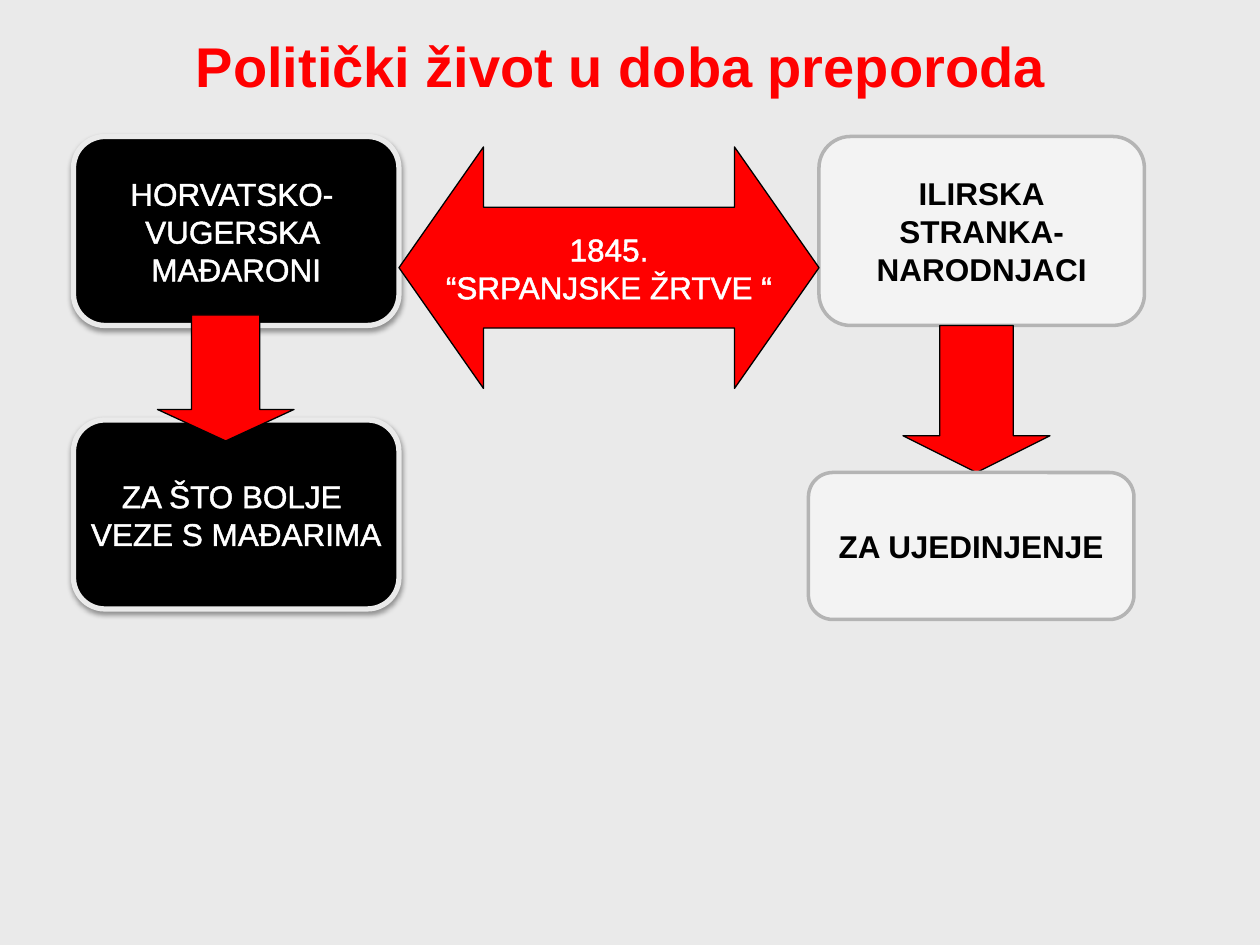
import pptx
import pptx.util
import pptx.dml.color
import pptx.enum.shapes
import pptx.enum.text
import pptx.oxml
import pptx.oxml.ns
from dataclasses import dataclass

SHAPE = pptx.enum.shapes.MSO_SHAPE
ANCHOR = pptx.enum.text.MSO_ANCHOR
NS = pptx.oxml.ns.nsdecls("a")
UNIT = pptx.util.Inches(1) // 12  # grid of 120 columns by 90 rows
COLS, ROWS = 120, 90


@dataclass(frozen=True)
class Theme:
    font: str = "Arial"
    title_size: int = 32
    body_size: int = 18
    back: str = "EAEAEA"
    red: str = "FF0000"
    black: str = "000000"
    white: str = "FFFFFF"
    light: str = "F3F3F3"
    grey: str = "B4B4B4"
    title_outline: str = "44C2FF"


@dataclass(frozen=True)
class BoxStyle:
    fill: str
    line: str
    width: float
    text: str
    outline: float
    bold: bool = False
    shadow: bool = False


THEME = Theme()
DARK = BoxStyle(THEME.black, THEME.back, 3, THEME.white, 1.45, shadow=True)
LIGHT = BoxStyle(THEME.light, THEME.grey, 2, THEME.black, 1, bold=True)
ARROW = BoxStyle(THEME.red, THEME.black, 0.75, THEME.white, 1.45)


def rgb(value):
    return pptx.dml.color.RGBColor.from_string(value)


def place(sp, col, row, cols, rows):
    sp.left, sp.top = round(col * UNIT), round(row * UNIT)
    sp.width, sp.height = round(cols * UNIT), round(rows * UNIT)


def write(sp, lines, size, color, bold, outline, width, anchor, wrap):
    """Fill a shape with centred, outlined lines of text."""
    tf = sp.text_frame
    tf.word_wrap = wrap
    tf.vertical_anchor = anchor
    for i, line in enumerate(lines):
        p = tf.add_paragraph() if i else tf.paragraphs[0]
        p.alignment = pptx.enum.text.PP_ALIGN.CENTER
        r = p.add_run()
        r.text = line
        r.font.size = pptx.util.Pt(size)
        r.font.name = THEME.font
        r.font.bold = bold
        r.font.color.rgb = rgb(color)
        r.font._element.insert(0, pptx.oxml.parse_xml(
            f'<a:ln {NS} w="{pptx.util.Pt(width)}"><a:solidFill>'
            f'<a:srgbClr val="{outline}"/></a:solidFill></a:ln>'))


def add_shadow(sp):
    """Soft shadow straight below the shape."""
    effects = sp._element.spPr.find(pptx.oxml.ns.qn("a:effectLst"))
    effects.append(pptx.oxml.parse_xml(
        f'<a:outerShdw {NS} blurRad="{pptx.util.Pt(3.1)}" '
        f'dist="{pptx.util.Pt(1.6)}" dir="5400000" rotWithShape="0">'
        f'<a:srgbClr val="{THEME.black}"><a:alpha val="38000"/>'
        '</a:srgbClr></a:outerShdw>'))


def add_block(s, kind, cell, style, lines=(), adjustments=()):
    """Add a box or block arrow on the grid."""
    sp = s.shapes.add_shape(kind, 0, 0, 0, 0)
    place(sp, *cell)
    for i, value in enumerate(adjustments):
        sp.adjustments[i] = value
    sp.fill.solid()
    sp.fill.fore_color.rgb = rgb(style.fill)
    sp.line.color.rgb = rgb(style.line)
    sp.line.width = pptx.util.Pt(style.width)
    sp.shadow.inherit = False
    if style.shadow:
        add_shadow(sp)
    write(sp, lines, THEME.body_size, style.text, style.bold,
          style.text, style.outline, ANCHOR.MIDDLE, False)


def add_title(s, text):
    title = s.shapes.title
    place(title, 0, 0, 118.3, 10)
    title.fill.solid()
    title.fill.fore_color.rgb = rgb(THEME.back)
    write(title, [text], THEME.title_size, THEME.red, True,
          THEME.title_outline, 1.42, ANCHOR.BOTTOM, True)


def main():
    prs = pptx.Presentation()
    prs.slide_width, prs.slide_height = COLS * UNIT, ROWS * UNIT
    s = prs.slides.add_slide(prs.slide_layouts[5])
    s.background.fill.solid()
    s.background.fill.fore_color.rgb = rgb(THEME.back)
    add_title(s, "Politički život u doba preporoda")

    # The two parties
    box = SHAPE.ROUNDED_RECTANGLE
    add_block(s, box, (7, 13, 31, 18), DARK,
              ["HORVATSKO- ", "VUGERSKA ", "MAĐARONI"])
    add_block(s, box, (78, 13, 31, 18), LIGHT,
              ["ILIRSKA", "STRANKA-", "NARODNJACI"])

    # Their aims, each with an arrow from the party above
    add_block(s, SHAPE.DOWN_ARROW, (86, 31, 14, 14), ARROW, (), (0.5, 0.25))
    add_block(s, box, (77, 45, 31, 14), LIGHT, ["ZA UJEDINJENJE"])
    add_block(s, box, (7, 40, 31, 18), DARK,
              ["ZA ŠTO BOLJE ", "VEZE S MAĐARIMA"])
    add_block(s, SHAPE.DOWN_ARROW, (15, 30, 13, 12), ARROW, (), (0.5, 0.25))

    # The conflict between them
    add_block(s, SHAPE.LEFT_RIGHT_ARROW, (38, 14, 40, 23), ARROW,
              ["1845.", "“SRPANJSKE ŽRTVE “"], (0.5, 0.35))

    prs.save("out.pptx")


if __name__ == "__main__":
    main()
